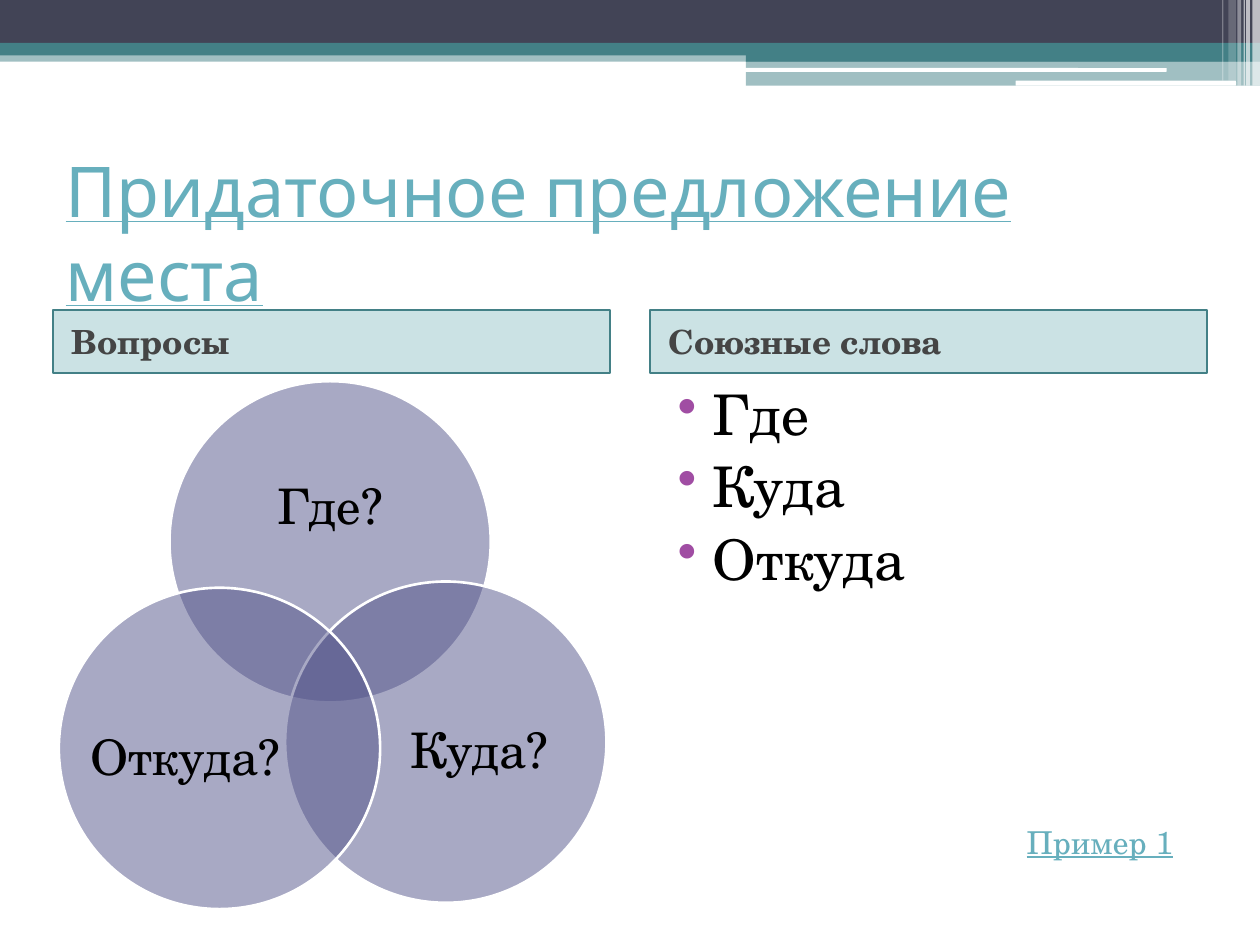
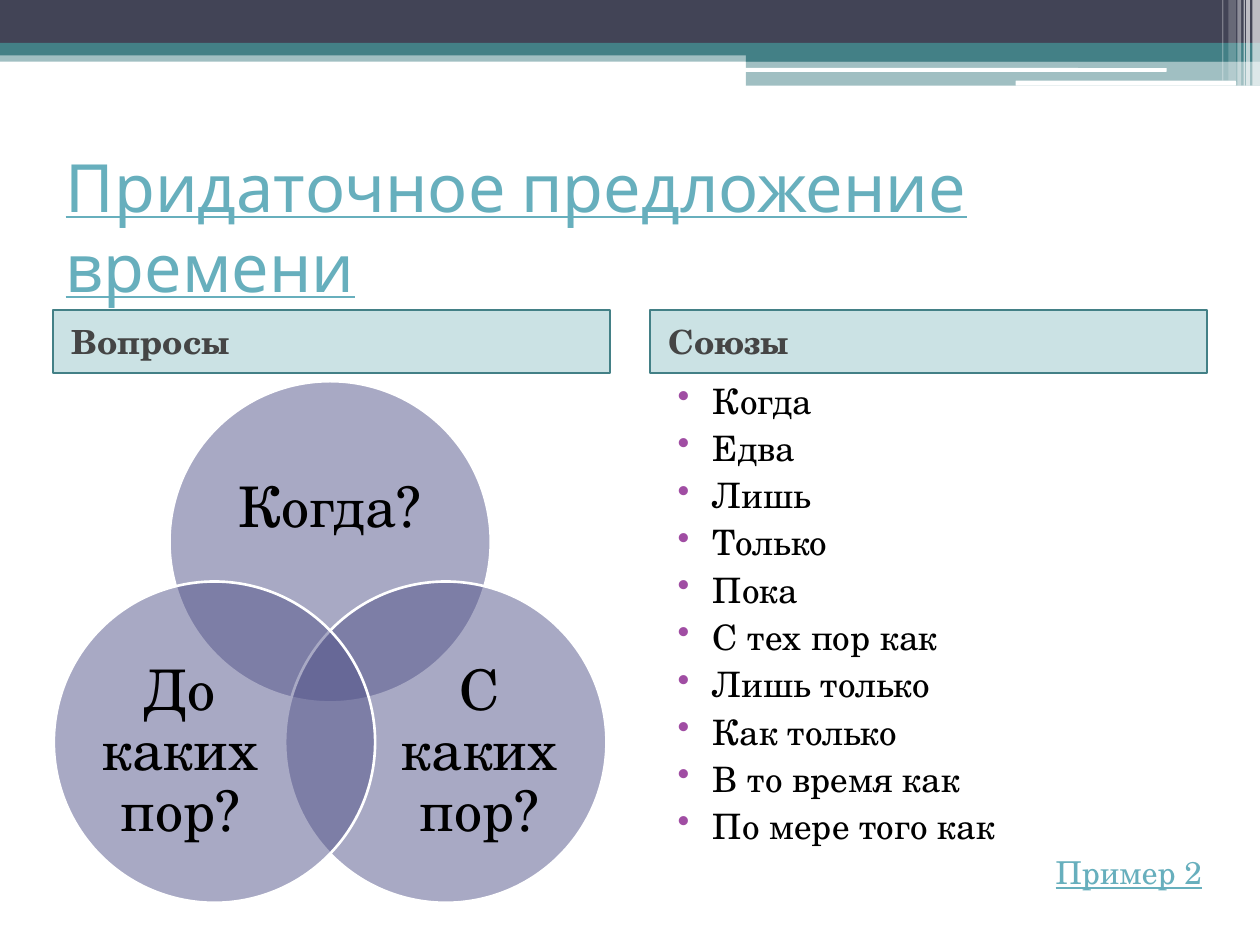
from math import cos, radians, sin
from pptx import Presentation
from pptx.dml.color import RGBColor
from pptx.enum import shapes, text
from pptx.oxml import ns, xmlchemy
from pptx.util import Inches, Pt

SERIF, SANS = "TeX Gyre Schola", "Karla"
TEAL, DARK, WHITE, LINK = "438086", "424456", "FFFFFF", "67AFBD"
PLUM, AQUA, GREY, BLACK, DOT = "53548A", "328E97", "454545", "000000", "A04DA3"
RECT = shapes.MSO_SHAPE.RECTANGLE
ROUND = shapes.MSO_SHAPE.ROUNDED_RECTANGLE
OVAL = shapes.MSO_SHAPE.OVAL
MID = text.MSO_ANCHOR.MIDDLE
LEFT, MIDDLE = text.PP_ALIGN.LEFT, text.PP_ALIGN.CENTER

SLIDES = [
    dict(title="Придаточное предложение места", size=40, high=1.17,
         heads=["Вопросы", "Союзные слова"],
         asks=["Где?", "Куда?", "Откуда?"], ask_size=28, shift=(0.04, 0.05),
         words=["Где", "Куда", "Откуда"], word_size=32, area=(4.42, 2.58),
         link="Пример 1", link_box=(8.05, 6.48, 1.48, 0.4)),
    dict(title="Придаточное предложение времени", size=38, high=1.09,
         heads=["Вопросы", "Союзы"],
         asks=["Когда?", "С каких пор?", "До каких пор?"], ask_size=32, shift=(0, 0),
         words=["Когда", "Едва", "Лишь", "Только", "Пока", "С тех пор как",
                "Лишь только", "Как только", "В то время как", "По мере того как"],
         word_size=20, area=(2.97, 4.25),
         link="Пример 2", link_box=(8.28, 6.72, 1.41, 0.4)),
]

BANDS = [
    (RECT, (0, 0.4, 10, 0.09), TEAL, 50),
    (RECT, (0, 0, 10, 0.34), DARK, 100),
    (RECT, (0, 0.34, 10, 0.1), TEAL, 100),
    (RECT, (5.92, 0.39, 4.08, 0.1), TEAL, 100),
    (RECT, (5.92, 0.48, 4.08, 0.2), TEAL, 50),
    (ROUND, (5.91, 0.54, 3.35, 0.03), WHITE, 100),
    (ROUND, (8.06, 0.64, 1.75, 0.04), WHITE, 100),
]
STRIPES = [(9.94, 0.06, 0.68, 65), (9.89, 0.03, 0.68, 65), (9.87, 0.01, 0.68, 60),
           (9.82, 0.03, 0.68, 40), (9.75, 0.06, 0.64, 20), (9.7, 0.01, 0.64, 30)]
BANDS += [(RECT, (x, 0, w, h), WHITE, a) for x, w, h, a in STRIPES]

COLS, COL_TOP, COL_W, COL_H = (0.42, 5.16), 2.46, 4.42, 0.5
HUB, REACH, DIAM = (2.62, 5.36), 1.06, 2.55
LABELS = [(0.34, 0.44, 1.87, 1.15), (0.78, 0.66, 1.53, 1.4), (0.24, 0.66, 1.53, 1.4)]


def color(code):
    return RGBColor.from_string(code)


def inches(box):
    return [Inches(v) for v in box]


def draw(slide, kind, box, fill, alpha=100, line=None, width=1):
    shape = slide.shapes.add_shape(kind, *inches(box))
    shape.shadow.inherit = False
    shape.fill.solid()
    shape.fill.fore_color.rgb = color(fill)
    if alpha < 100:
        tint = shape.element.spPr.find(ns.qn("a:solidFill"))[0]
        add(tint, "a:alpha", val=alpha * 1000)
    if line:
        shape.line.color.rgb = color(line)
        shape.line.width = Pt(width)
    else:
        shape.line.fill.background()
    return shape


def add(node, tag, **attrs):
    child = xmlchemy.OxmlElement(tag)
    for key, val in attrs.items():
        child.set(key, str(val))
    node.append(child)
    return child


def write(shape, lines, size, tone, face=SERIF, align=LEFT, anchor=None,
          inset=None, bold=False, under=False):
    frame = shape.text_frame
    frame.text = "\n".join(lines)
    frame.word_wrap = True
    frame.auto_size = text.MSO_AUTO_SIZE.NONE
    if anchor is not None:
        frame.vertical_anchor = anchor
    if inset is not None:
        frame.margin_left = frame.margin_right = Inches(inset)
        frame.margin_top = frame.margin_bottom = Inches(inset)
    for para in frame.paragraphs:
        para.alignment = align
        font = para.font
        font.name, font.size, font.bold, font.underline = face, Pt(size), bold, under
        font.color.rgb = color(tone)
    return frame.paragraphs


def box(slide, area):
    return slide.shapes.add_textbox(*inches(area))


def indent(para, left, first=0):
    props = para._p.get_or_add_pPr()
    props.set("marL", str(Inches(left)))
    props.set("indent", str(Inches(first)))
    return props


def bullet(para):
    para.space_before = Pt(3)
    props = indent(para, 0.4, -0.28)
    marks = [xmlchemy.OxmlElement("a:buClr"), xmlchemy.OxmlElement("a:buChar")]
    add(marks[0], "a:srgbClr", val=DOT)
    marks[1].set("char", "•")
    spot = props.index(props.find(ns.qn("a:defRPr")))
    props[spot:spot] = marks


def title(slide, page):
    head = slide.shapes.title
    head.left, head.top, head.width, head.height = inches((0.42, 1.25, 9.17, page["high"]))
    write(head, [page["title"]], page["size"], LINK, SANS, anchor=MID, under=True)


def heads(slide, names):
    for x, name in zip(COLS, names):
        bar = draw(slide, RECT, (x, COL_TOP, COL_W, COL_H), AQUA, 25, TEAL)
        para = write(bar, [name], 19, GREY, anchor=MID, bold=True)[0]
        para.space_before = Pt(3)
        indent(para, 0.05)


def venn(slide, page):
    for i, (ask, (dx, dy, w, h)) in enumerate(zip(page["asks"], LABELS)):
        turn = radians(120 * i - 90)
        x = HUB[0] + REACH * cos(turn) - DIAM / 2
        y = HUB[1] + REACH * sin(turn) - DIAM / 2
        if i == 2:
            x, y = x + page["shift"][0], y + page["shift"][1]
        draw(slide, OVAL, (x, y, DIAM, DIAM), PLUM, 50, WHITE, 1.5)
        label = box(slide, (x + dx, y + dy, w, h))
        para = write(label, [ask], page["ask_size"], BLACK, align=MIDDLE,
                     anchor=MID, inset=0)[0]
        para.line_spacing = 0.9


def build(deck, page):
    slide = deck.slides.add_slide(deck.slide_layouts[5])
    for band in BANDS:
        draw(slide, *band)
    title(slide, page)
    heads(slide, page["heads"])
    venn(slide, page)
    words = box(slide, (COLS[1], COL_TOP + COL_H, *page["area"]))
    for para in write(words, page["words"], page["word_size"], BLACK):
        bullet(para)
    write(box(slide, page["link_box"]), [page["link"]], 18, LINK, under=True)


def main():
    deck = Presentation()
    deck.slide_width, deck.slide_height = Inches(10), Inches(7.5)
    for page in SLIDES:
        build(deck, page)
    deck.save("out.pptx")


if __name__ == "__main__":
    main()
